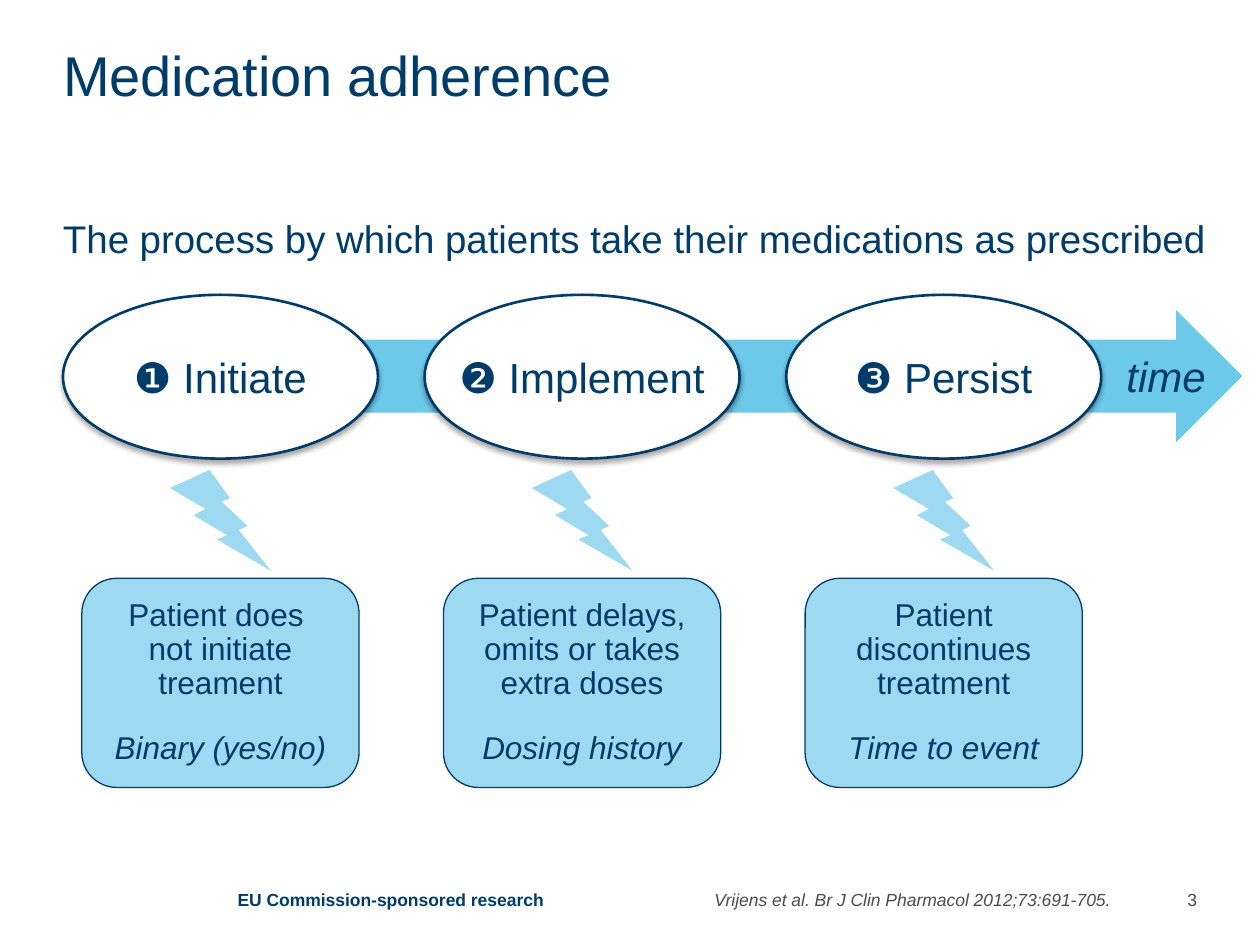
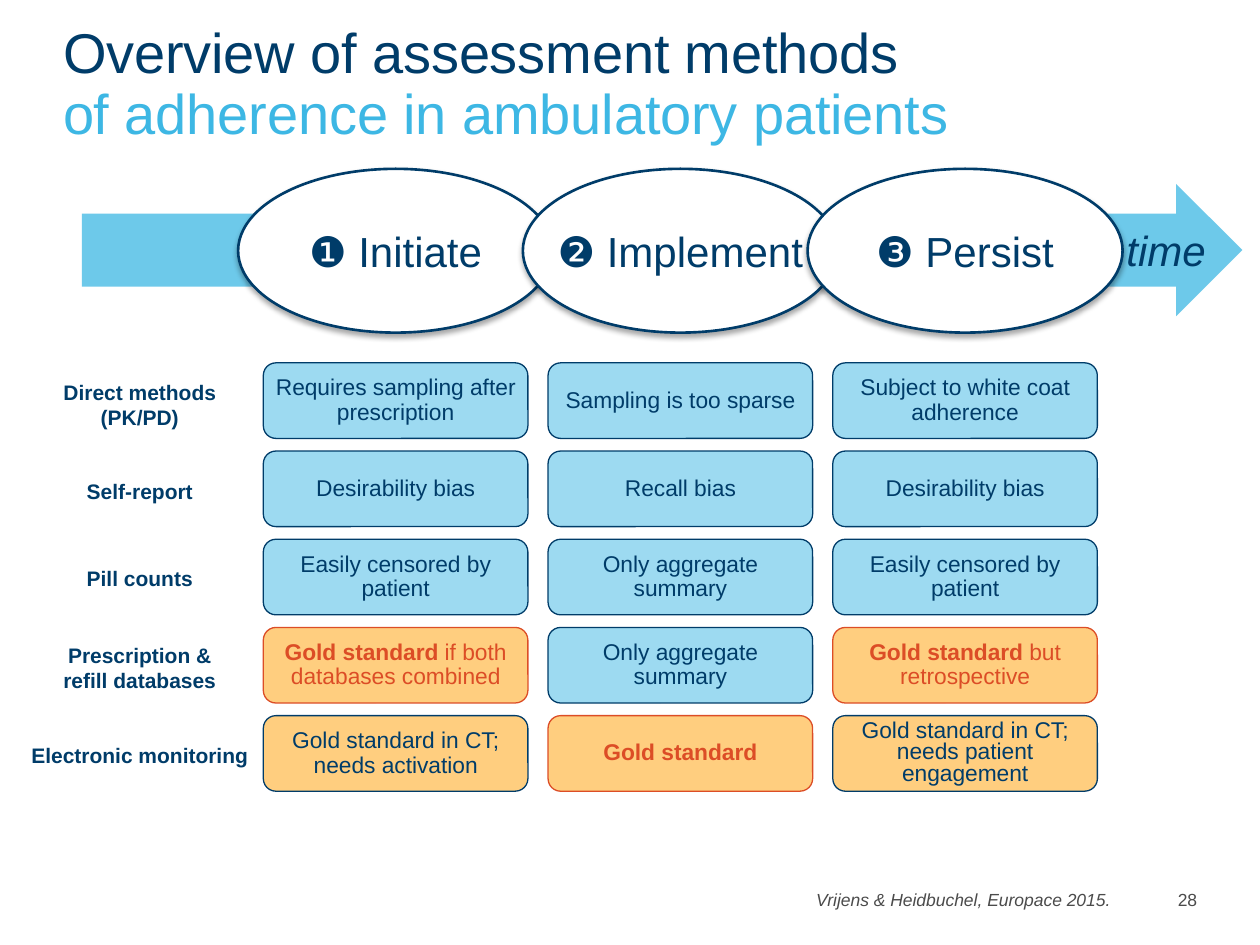
from pptx import Presentation
from pptx import util as u
from pptx.dml.color import RGBColor
from pptx.enum import shapes, text
from pptx.oxml.ns import qn
from lxml import etree

PX = 9144  # EMU in one px, 100 px to the inch
COLOURS = {
    "navy": "003C69",
    "sky": "3DB7E4",
    "white": "FFFFFF",
    "orange": "FF9E00",
    "red": "DC4D26",
    "grey": "4B4B4B",
    "black": "000000",
}
STAGES = ("❶ Initiate", "❷ Implement", "❸ Persist")
PRESET = shapes.MSO_SHAPE
LEFT, CENTER, RIGHT = text.PP_ALIGN.LEFT, text.PP_ALIGN.CENTER, text.PP_ALIGN.RIGHT
TOP, MIDDLE = text.MSO_ANCHOR.TOP, text.MSO_ANCHOR.MIDDLE

DEVIATIONS = (
    ("Patient does \nnot initiate treament", "Binary (yes/no)"),
    ("Patient delays, omits or takes extra doses", "Dosing history"),
    ("Patient discontinues treatment", "Time to event"),
)

BOLD = {"bold": True}
GOLD = ("Gold standard", BOLD)
# Label, label top, label width, then (fill, line, runs) for each stage
METHODS = (
    ("Direct methods (PK/PD)", 301, 150, (
        ("sky", "navy", ["Requires sampling after prescription"]),
        ("sky", "navy", ["Sampling is too sparse"]),
        ("sky", "navy", ["Subject to white coat adherence"]))),
    ("Self-report", 380, 150, (
        ("sky", "navy", ["Desirability bias"]),
        ("sky", "navy", ["Recall bias"]),
        ("sky", "navy", ["Desirability bias"]))),
    ("Pill counts", 449, 150, (
        ("sky", "navy", ["Easily censored by patient"]),
        ("sky", "navy", ["Only aggregate summary"]),
        ("sky", "navy", ["Easily censored by patient"]))),
    ("Prescription & refill databases", 510, 150, (
        ("orange", "red", [GOLD, " if both databases combined"]),
        ("sky", "navy", ["Only aggregate summary"]),
        ("orange", "red", [GOLD, " but retrospective"]))),
    ("Electronic monitoring", 589, 174, (
        ("orange", "navy", ["Gold standard in CT; needs activation"]),
        ("orange", "red", [GOLD]),
        ("orange", "navy", ["Gold standard in CT; needs patient engagement"]))),
)


def emu(*lengths):
    return [u.Emu(length * PX) for length in lengths]


def rgb(name):
    return RGBColor.from_string(COLOURS[name])


def set_all(target, values):
    for name, value in values.items():
        setattr(target, name, value)


def add_run(paragraph, words, size, colour, spacing=None, **font):
    run = paragraph.add_run()
    run.text = words
    run.font.color.rgb = rgb(colour)
    set_all(run.font, {"name": "Arial", "size": u.Pt(size), **font})
    if spacing:
        run._r.get_or_add_rPr().set("spc", str(spacing))


def write(shape, paragraphs, style, align=LEFT, line=1.0, gap=0,
          margins=(0, 0, 0, 0), wrap=True, anchor=TOP):
    """Fill a shape with paragraphs, each a list of words or (words, overrides)."""
    frame = shape.text_frame
    left, top, right, bottom = emu(*margins)
    set_all(frame, {
        "margin_left": left, "margin_top": top, "margin_right": right,
        "margin_bottom": bottom, "word_wrap": wrap, "vertical_anchor": anchor,
        "auto_size": text.MSO_AUTO_SIZE.NONE})
    for index, runs in enumerate(paragraphs):
        paragraph = frame.add_paragraph() if index else frame.paragraphs[0]
        set_all(paragraph, {"alignment": align, "line_spacing": line,
                            "space_before": u.Pt(gap if index else 0)})
        for run in runs:
            words, overrides = (run, {}) if isinstance(run, str) else run
            for row, part in enumerate(words.split("\n")):
                if row:
                    paragraph.add_line_break()
                if part:
                    add_run(paragraph, part, **{**style, **overrides})


def add_text(container, box, words, style, **layout):
    write(container.add_textbox(*emu(*box)), [[words]], style, **layout)


def add_preset(container, preset, box, fill, opacity=100, line=None, width=0.75):
    shape = container.add_shape(preset, *emu(*box))
    shape.shadow.inherit = False
    shape.fill.solid()
    shape.fill.fore_color.rgb = rgb(fill)
    if opacity < 100:
        colour = shape._element.spPr.find(f"{qn('a:solidFill')}/{qn('a:srgbClr')}")
        etree.SubElement(colour, qn("a:alpha"), val=str(opacity * 1000))
    if line:
        shape.line.color.rgb = rgb(line)
        shape.line.width = u.Pt(width)
    else:
        shape.line.fill.background()
    return shape


def add_soft_shadow(shape):
    effects = shape._element.spPr.find(qn("a:effectLst"))
    shadow = etree.SubElement(effects, qn("a:outerShdw"), blurRad=str(u.Pt(3.1)),
                              dist=str(u.Pt(1.8)), dir="5400000", rotWithShape="0")
    colour = etree.SubElement(shadow, qn("a:srgbClr"), val=COLOURS["black"])
    etree.SubElement(colour, qn("a:alpha"), val="35000")


def add_slide(presentation, title_top, title, line, number, source, source_left):
    """Add a slide with its title, page number and source reference."""
    slide = presentation.slides.add_slide(presentation.slide_layouts[5])
    heading = slide.shapes.title
    set_all(heading, dict(zip(("left", "top", "width", "height"),
                              emu(50, title_top, 901, 80))))
    write(heading, [title], {"size": 32, "colour": "navy", "spacing": -10}, line=line)
    footer = {"size": 10, "colour": "grey"}
    padding = (10, 5, 10, 5)
    add_text(slide.shapes, (917, 701, 43, 25), number, footer,
             align=RIGHT, margins=padding)
    add_text(slide.shapes, (source_left, 701, 891 - source_left, 27), source,
             {**footer, "italic": True}, align=RIGHT, margins=padding, wrap=False)
    return slide


def add_timeline(slide, top, first_left, pitch):
    """Draw the time arrow with the three stage ellipses on it."""
    style = {"size": 24, "colour": "navy"}
    layout = {"margins": (0, 5, 0, 5), "anchor": MIDDLE}
    arrow = add_preset(slide.shapes, PRESET.RIGHT_ARROW,
                       (65, top + 12, 921, 105), "sky", 75)
    arrow.adjustments[0] = 0.552
    write(arrow, [["time"]], {**style, "italic": True}, align=RIGHT, **layout)
    for index, stage in enumerate(STAGES):
        ellipse = add_preset(slide.shapes, PRESET.OVAL,
                             (first_left + index * pitch, top, 250, 130),
                             "white", line="navy", width=1.5)
        add_soft_shadow(ellipse)
        write(ellipse, [[stage]], style, align=CENTER, wrap=False, **layout)


def add_deviation(slide, left, problem, measure):
    add_preset(slide.shapes, PRESET.LIGHTNING_BOLT, (left + 70, 373, 80, 80), "sky", 50)
    box = add_preset(slide.shapes, PRESET.ROUNDED_RECTANGLE,
                     (left, 459, 220, 166), "sky", 50, "navy")
    write(box, [[problem], [(measure, {"italic": True})]],
          {"size": 18, "colour": "navy"}, align=CENTER, line=0.9, gap=18, anchor=MIDDLE)


def add_method_row(slide, top, first_left, pitch, label, label_top, label_width, cells):
    row = slide.shapes.add_group_shape().shapes
    for index, (fill, colour, runs) in enumerate(cells):
        cell = add_preset(row, PRESET.ROUNDED_RECTANGLE,
                          (first_left + index * pitch, top, 210, 60), fill, 50, colour)
        three_lines = len(runs[0]) > 40
        write(cell, [runs], {"size": 13, "colour": colour}, align=CENTER,
              line=0.8 if three_lines else 0.9, margins=(5, 0, 5, 0), anchor=MIDDLE)
    add_text(row, (111 - label_width // 2, label_top, label_width, 17), label,
             {"size": 12, "colour": "navy", **BOLD}, align=CENTER)


def build_process(presentation):
    slide = add_slide(presentation, 40, ["Medication adherence"], 0.86, "3",
                      "Vrijens et al. Br J Clin Pharmacol 2012;73:691-705.", 554)
    add_text(slide.shapes, (50, 175, 910, 33),
             "The process by which patients take their medications as prescribed",
             {"size": 22, "colour": "navy"}, line=0.9)
    first_left, pitch = 50, 287
    add_timeline(slide, 234, first_left, pitch)
    for index, (problem, measure) in enumerate(DEVIATIONS):
        add_deviation(slide, first_left + 15 + index * pitch, problem, measure)
    add_text(slide.shapes, (177, 703, 266, 25), "EU Commission-sponsored research",
             {"size": 10, "colour": "navy", **BOLD}, align=CENTER, line=0.86,
             margins=(10, 5, 10, 5), wrap=False)


def build_methods(presentation):
    title = ["Overview of assessment methods \n",
             ("of adherence in ambulatory patients", {"colour": "sky"})]
    slide = add_slide(presentation, 20, title, 0.9, "28",
                      "Vrijens & Heidbuchel, Europace 2015.", 632)
    first_left, pitch = 189, 226
    add_timeline(slide, 134, first_left, pitch)
    for index, method in enumerate(METHODS):
        add_method_row(slide, 288 + index * 70, first_left + 20, pitch, *method)


def main():
    presentation = Presentation()
    presentation.slide_width, presentation.slide_height = emu(1000, 750)
    build_process(presentation)
    build_methods(presentation)
    presentation.save("out.pptx")


if __name__ == "__main__":
    main()
